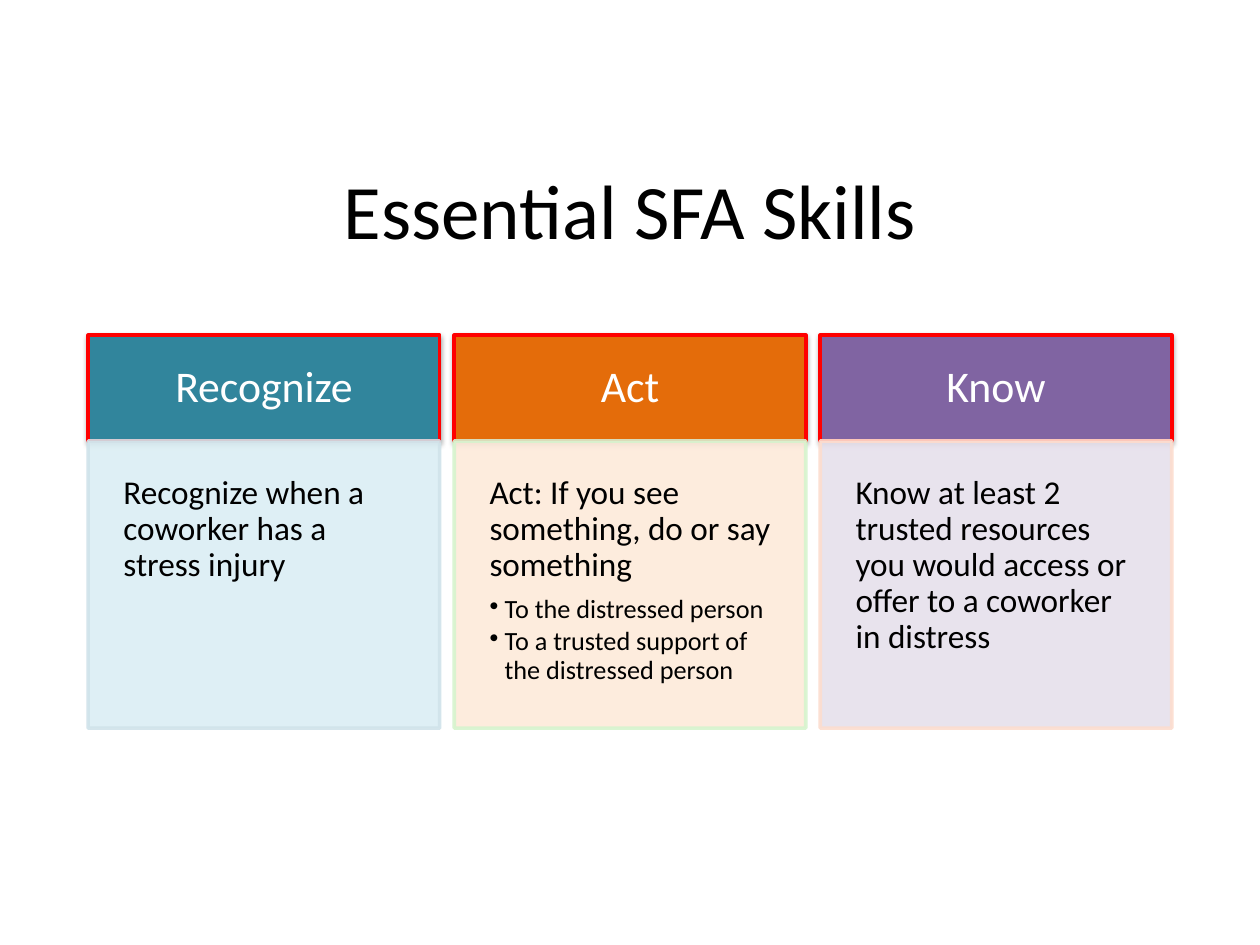
from dataclasses import dataclass

from lxml.etree import SubElement
from pptx import Presentation
from pptx.dml.color import RGBColor
from pptx.enum.shapes import MSO_SHAPE as Shape
from pptx.enum.text import MSO_ANCHOR as Anchor, PP_ALIGN as Align
from pptx.oxml.ns import qn
from pptx.util import Inches, Pt


@dataclass(frozen=True)
class Theme:
    font: str = "Calibri"
    title_size: int = 44
    heading_size: int = 25
    body_size: int = 19
    bullet_size: int = 15
    text: str = "000000"
    heading_text: str = "FFFFFF"
    heading_line: str = "FF0000"
    opacity: int = 90


THEME = Theme()

# heading, heading fill, body fill, body line, body text, bullets
SKILLS = [
    ("Recognize", "31859C", "DBEEF4", "D0E3EA",
     "Recognize when a coworker has a stress injury", []),
    ("Act", "E46C0A", "FDEADA", "D6F4CE",
     "Act: If you see something, do or say something",
     ["To the distressed person",
      "To a trusted support of the distressed person"]),
    ("Know", "8064A2", "E6E0EC", "FCDDCF",
     "Know at least 2 trusted resources you would access or offer "
     "to a coworker in distress", []),
]


def write(para, text, size, color=THEME.text, align=Align.LEFT):
    para.text = text
    para.alignment = align
    para.font.name = THEME.font
    para.font.size = Pt(size)
    para.font.color.rgb = RGBColor.from_string(color)


def add_bullet(para):
    props = para._p.get_or_add_pPr()
    props.set("marL", str(Inches(0.12)))
    props.set("indent", str(Inches(-0.12)))
    SubElement(props, qn("a:buChar"), char="•")


def set_opacity(shape, percent):
    for color in shape._element.spPr.iter(qn("a:srgbClr")):
        SubElement(color, qn("a:alpha"), val=str(percent * 1000))


def add_shadow(shape):
    effects = shape._element.spPr.find(qn("a:effectLst"))
    shadow = SubElement(effects, qn("a:outerShdw"), blurRad=str(Pt(3.1)),
                        dist=str(Pt(1.6)), dir="5400000", rotWithShape="0")
    color = SubElement(shadow, qn("a:srgbClr"), val="000000")
    SubElement(color, qn("a:alpha"), val="38000")


def add_panel(page, left, top, width, height, fill, line, inset, anchor):
    panel = page.shapes.add_shape(Shape.RECTANGLE, Inches(left), Inches(top),
                                  Inches(width), Inches(height))
    panel.shadow.inherit = False
    panel.fill.solid()
    panel.fill.fore_color.rgb = RGBColor.from_string(fill)
    panel.line.color.rgb = RGBColor.from_string(line)
    panel.line.width = Pt(2)
    frame = panel.text_frame
    frame.word_wrap = True
    frame.vertical_anchor = anchor
    frame.margin_left = frame.margin_right = Inches(inset)
    frame.margin_top = frame.margin_bottom = Inches(inset)
    return panel


def add_title(page, left, top, width, height):
    box = page.shapes.add_textbox(Inches(left), Inches(top),
                                  Inches(width), Inches(height))
    box.text_frame.word_wrap = True
    write(box.text_frame.paragraphs[0], "Essential SFA Skills",
          THEME.title_size, align=Align.CENTER)


def add_skill(page, left, top, width, height, skill):
    name, heading_fill, body_fill, body_line, text, bullets = skill
    heading_height = 0.84

    # Heading
    heading = add_panel(page, left, top, width, heading_height, heading_fill,
                        THEME.heading_line, 0.22, Anchor.MIDDLE)
    add_shadow(heading)
    para = heading.text_frame.paragraphs[0]
    para.line_spacing = 0.9
    write(para, name, THEME.heading_size, THEME.heading_text, Align.CENTER)

    # Body with optional bullets
    body = add_panel(page, left, top + heading_height, width,
                     height - heading_height, body_fill, body_line,
                     0.28, Anchor.TOP)
    set_opacity(body, THEME.opacity)
    para = body.text_frame.paragraphs[0]
    para.line_spacing = 0.9
    para.space_after = Pt(7)
    write(para, text, THEME.body_size)
    for bullet in bullets:
        para = body.text_frame.add_paragraph()
        para.level = 1
        para.line_spacing = 0.9
        para.space_after = Pt(2)
        add_bullet(para)
        write(para, bullet, THEME.bullet_size)


def add_skills(page, left, top, width, height):
    column = 2.79
    step = (width - column) / (len(SKILLS) - 1)
    for index, skill in enumerate(SKILLS):
        add_skill(page, left + index * step, top, column, height, skill)


def main():
    deck = Presentation()
    deck.slide_width, deck.slide_height = Inches(10), Inches(7.5)
    page = deck.slides.add_slide(deck.slide_layouts[6])
    add_title(page, 0.69, 1.24, 8.62, 1.09)
    add_skills(page, 0.7, 2.66, 8.6, 3.12)
    deck.save("out.pptx")


if __name__ == "__main__":
    main()
